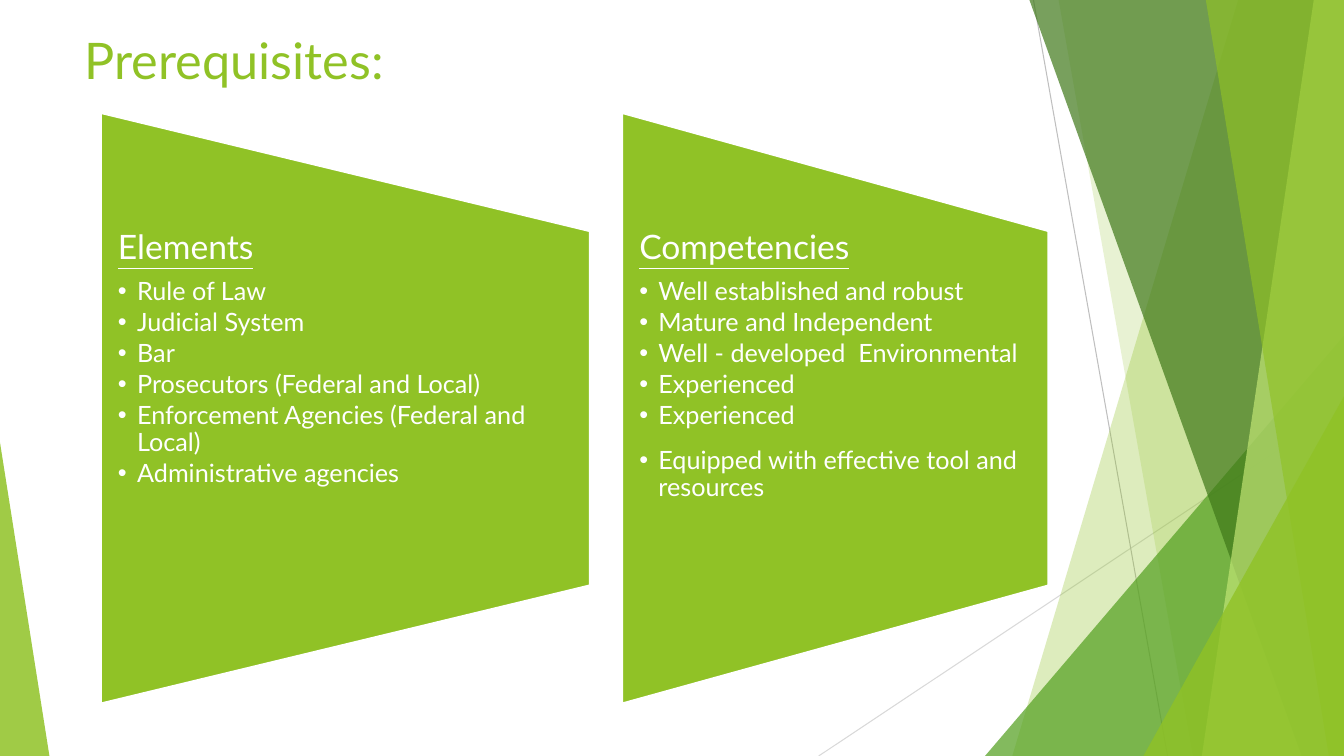
from dataclasses import dataclass

from lxml import etree
from pptx import Presentation
from pptx.dml.color import RGBColor
from pptx.enum.shapes import MSO_CONNECTOR, MSO_SHAPE
from pptx.enum.text import MSO_ANCHOR, MSO_AUTO_SIZE, PP_ALIGN
from pptx.oxml.ns import qn
from pptx.util import Inches, Pt

STRAIGHT = MSO_CONNECTOR.STRAIGHT
TRIANGLE = MSO_SHAPE.ISOSCELES_TRIANGLE
TRAPEZOID = MSO_SHAPE.FLOWCHART_MANUAL_OPERATION
TOP = MSO_ANCHOR.TOP
LEFT = PP_ALIGN.LEFT
NO_FIT = MSO_AUTO_SIZE.NONE
TWO_CONTENT = 3
WIDTH, HEIGHT = 13.33, 7.5


@dataclass(frozen=True)
class Theme:
    """Colours and type of the slide."""
    font: str = "Lato"
    title_size: int = 36
    heading_size: int = 24
    item_size: int = 18
    white: str = "FFFFFF"
    lime: str = "90C226"
    pale_lime: str = "C0E474"
    green: str = "54A021"
    dark_green: str = "3F7819"
    grey: str = "BFBFBF"
    light_grey: str = "D9D9D9"


THEME = Theme()

RAYS = [
    (WIDTH, 4.03, 8.12, HEIGHT, THEME.light_grey),
    (10.25, 0, 11.58, HEIGHT, THEME.grey),
]
BACK_BAND = (12.28, 10.04, THEME.lime, 30)
SECOND_BAND = (10.5, 11.83, THEME.lime, 20)
FRONT_BANDS = [
    (10.21, 12.91, THEME.dark_green, 70),
    (13.03, 11.92, THEME.pale_lime, 70),
    (11.96, 13.18, THEME.lime, 65),
]
PANELS = [
    (1, 4.85, "Elements",
     ["Rule of Law", "Judicial System", "Bar", "Prosecutors (Federal and Local)",
      "Enforcement Agencies (Federal and Local)", "Administrative agencies"], 0),
    (6.17, 4.23, "Competencies",
     ["Well established and robust", "Mature and Independent",
      "Well - developed  Environmental", "Experienced", "Experienced",
      "Equipped with effective tool and resources"], 10),
]


def colour(code):
    """Turn a hex code into a colour."""
    return RGBColor.from_string(code)


def paint(shape, code, opacity=100):
    """Fill a shape without outline or shadow, at an opacity in percent."""
    shape.shadow.inherit = False
    shape.line.fill.background()
    shape.fill.solid()
    shape.fill.fore_color.rgb = colour(code)
    if opacity < 100:
        tint = next(shape.element.iter(qn("a:srgbClr")))
        etree.SubElement(tint, qn("a:alpha"), val=str(opacity * 1000))


def add_ray(page, x1, y1, x2, y2, code):
    """Draw a thin decorative line."""
    ray = page.shapes.add_connector(
        STRAIGHT, Inches(x1), Inches(y1), Inches(x2), Inches(y2))
    ray.line.color.rgb = colour(code)
    ray.line.width = Pt(0.75)
    etree.SubElement(ray.element.spPr, qn("a:effectLst"))


def add_band(page, top_x, bottom_x, code, opacity):
    """Draw a slanted band that runs to the right edge of the slide."""
    builder = page.shapes.build_freeform(Inches(top_x), 0)
    corners = [(WIDTH, 0), (WIDTH, HEIGHT), (bottom_x, HEIGHT)]
    builder.add_line_segments([(Inches(x), Inches(y)) for x, y in corners])
    paint(builder.convert_to_shape(), code, opacity)


def add_corner(page, left, top, width, apex, code, opacity):
    """Draw a triangle standing on the bottom edge, its apex at 0 (left) or 1 (right)."""
    corner = page.shapes.add_shape(
        TRIANGLE, Inches(left), Inches(top), Inches(width), Inches(HEIGHT - top))
    corner.adjustments[0] = apex
    paint(corner, code, opacity)


def add_backdrop(page):
    """Draw the layered green facets."""
    for ray in RAYS:
        add_ray(page, *ray)
    add_band(page, *BACK_BAND)
    add_band(page, *SECOND_BAND)
    add_corner(page, 9.77, 3.33, 3.56, 1, THEME.green, 72)
    for band in FRONT_BANDS:
        add_band(page, *band)
    add_corner(page, 11.34, 3.93, 1.99, 1, THEME.lime, 80)
    add_corner(page, 0, 4.39, 0.49, 0, THEME.lime, 85)


def place(box, left, top, width, height):
    """Move a placeholder to the front and to its position."""
    box.left, box.top = Inches(left), Inches(top)
    box.width, box.height = Inches(width), Inches(height)
    box.element.getparent().append(box.element)
    frame = box.text_frame
    frame.word_wrap = True
    frame.auto_size = NO_FIT
    frame.vertical_anchor = TOP
    return frame


def style(para, size, code):
    """Set the font and alignment of a paragraph."""
    para.alignment = LEFT
    para.font.name = THEME.font
    para.font.size = Pt(size)
    para.font.color.rgb = colour(code)


def add_title(page, text):
    """Write the slide title."""
    frame = place(page.shapes.title, 0.74, 0.24, 9.4, 0.88)
    frame.text = text
    style(frame.paragraphs[0], THEME.title_size, THEME.lime)


def write_line(para, text, size, after, indent):
    """Write a list line with a hanging indent."""
    para.text = text
    style(para, size, THEME.white)
    para.line_spacing = 0.9
    para.space_before = Pt(0)
    para.space_after = Pt(after)
    properties = para._p.get_or_add_pPr()
    properties.set("marL", str(Inches(indent)))
    properties.set("indent", str(-Inches(indent)))
    return properties


def add_panel(page, box, left, width, heading, items, last_gap):
    """Draw a sideways trapezoid with a heading and a bulleted list."""
    length, middle = 5.86, 4.05
    panel = page.shapes.add_shape(
        TRAPEZOID, Inches(left + (width - length) / 2), Inches(middle - width / 2),
        Inches(length), Inches(width))
    panel.rotation = 270
    paint(panel, THEME.lime)
    panel.line.color.rgb = colour(THEME.white)
    panel.line.width = Pt(1.5)

    frame = place(box, left, 2.29, width, 3.52)
    frame.margin_left = frame.margin_right = Inches(0.17)
    frame.margin_top = frame.margin_bottom = 0
    title = frame.paragraphs[0]
    properties = write_line(title, heading, THEME.heading_size, 8.4, 0)
    etree.SubElement(properties, qn("a:buNone"))
    title.font.underline = True
    for item in items:
        para = frame.add_paragraph()
        write_line(para, item, THEME.item_size, 2.7, 0.19)
    para.space_before = Pt(last_gap)


def main():
    """Build and save the slide."""
    deck = Presentation()
    deck.slide_width, deck.slide_height = Inches(WIDTH), Inches(HEIGHT)
    page = deck.slides.add_slide(deck.slide_layouts[TWO_CONTENT])
    add_backdrop(page)
    add_title(page, "Prerequisites:")
    for number, panel in enumerate(PANELS, start=1):
        box = next(holder for holder in page.placeholders
                   if holder.placeholder_format.idx == number)
        add_panel(page, box, *panel)
    deck.save("out.pptx")


if __name__ == "__main__":
    main()
